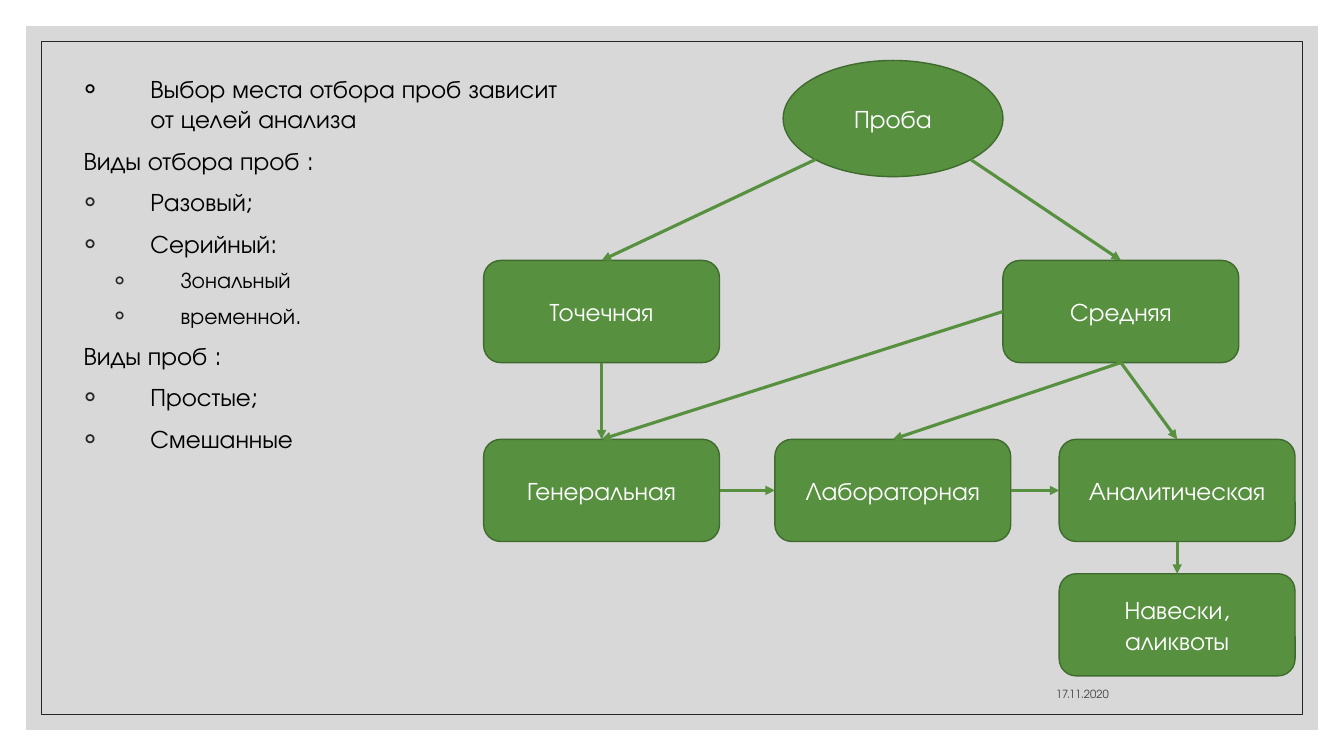
"""Build a slide about the kinds of samples and how they are taken."""
from dataclasses import dataclass
from typing import Optional

from lxml.etree import SubElement
from pptx import Presentation
from pptx.dml.color import RGBColor
from pptx.enum.shapes import MSO_CONNECTOR as Connector, MSO_SHAPE as Preset
from pptx.enum.text import MSO_ANCHOR as Anchor, PP_ALIGN as Align
from pptx.oxml.ns import qn
from pptx.util import Pt

TOP, LEFT, BOTTOM, RIGHT = range(4)


@dataclass(frozen=True)
class Theme:
    """Colours, font and type sizes of the slide."""
    font: str = "TeX Gyre Adventor"
    panel: str = "BFBFBF"
    frame: str = "262626"
    green: str = "57903F"
    dark_green: str = "406B2F"
    text: str = "000000"
    inverse: str = "FFFFFF"
    muted: str = "404040"
    body_size: float = 18
    detail_size: float = 16
    date_size: float = 8


@dataclass(frozen=True)
class Box:
    """Position and size in points."""
    left: float
    top: float
    width: float
    height: float


@dataclass(frozen=True)
class Node:
    """A labelled shape of the diagram."""
    label: str
    box: Box
    preset: Preset = Preset.ROUNDED_RECTANGLE


@dataclass(frozen=True)
class Arrow:
    """An arrow between the sides of two nodes."""
    source: str
    source_side: int
    target: str
    target_side: int


@dataclass(frozen=True)
class Item:
    """A line of the list; level None has no bullet."""
    text: str
    level: Optional[int] = None
    bullet_color: str = "262626"


THEME = Theme()
NODE_WIDTH, NODE_HEIGHT = 168.5, 73
ROW_KINDS, ROW_STAGES, ROW_PORTIONS = 186, 313.8, 409.8
COLUMN_LEFT, COLUMN_MIDDLE, COLUMN_RIGHT = 345.5, 553.5, 756.6


def node(label: str, left: float, top: float) -> Node:
    """Describe a node of the common size."""
    return Node(label, Box(left, top, NODE_WIDTH, NODE_HEIGHT))


ROOT = Node("Проба", Box(559.4, 43.2, 157, 83), Preset.OVAL)
NODES = (
    node("Точечная", COLUMN_LEFT, ROW_KINDS),
    node("Средняя", 716.4, ROW_KINDS),
    node("Генеральная", COLUMN_LEFT, ROW_STAGES),
    node("Лабораторная", COLUMN_MIDDLE, ROW_STAGES),
    node("Аналитическая", COLUMN_RIGHT, ROW_STAGES),
    node("Навески, аликвоты", COLUMN_RIGHT, ROW_PORTIONS),
)
ROOT_ARROWS = ((582.4, "Точечная"), (693.4, "Средняя"))
ROOT_ARROW_TOP = 114
ARROWS = (
    Arrow("Точечная", BOTTOM, "Генеральная", TOP),
    Arrow("Средняя", LEFT, "Генеральная", TOP),
    Arrow("Средняя", BOTTOM, "Лабораторная", TOP),
    Arrow("Средняя", BOTTOM, "Аналитическая", TOP),
    Arrow("Генеральная", RIGHT, "Лабораторная", LEFT),
    Arrow("Лабораторная", RIGHT, "Аналитическая", LEFT),
    Arrow("Аналитическая", BOTTOM, "Навески, аликвоты", TOP),
)
ITEMS = (
    Item("Выбор места отбора проб зависит от целей анализа", 0, THEME.text),
    Item("Виды отбора проб :"),
    Item("Разовый;", 0),
    Item("Серийный:", 0),
    Item("Зональный", 1),
    Item("временной.", 1),
    Item("Виды проб :"),
    Item("Простые;", 0),
    Item("Смешанные", 0),
)


def lengths(box: Box) -> tuple:
    """Return the box as slide lengths."""
    return Pt(box.left), Pt(box.top), Pt(box.width), Pt(box.height)


def write(paragraph, text: str, *, size: float = THEME.body_size,
          color: str = THEME.text, align: Align = Align.LEFT) -> None:
    """Put formatted text into a paragraph."""
    paragraph.alignment = align
    run = paragraph.add_run()
    run.text = text
    run.font.name = THEME.font
    run.font.size = Pt(size)
    run.font.color.rgb = RGBColor.from_string(color)


def add_shape(slide, preset: Preset, box: Box, *, fill: Optional[str] = None,
              line: Optional[str] = None, line_width: float = 1):
    """Add a flat shape with an optional fill and outline."""
    shape = slide.shapes.add_shape(preset, *lengths(box))
    shape.shadow.inherit = False
    if fill:
        shape.fill.solid()
        shape.fill.fore_color.rgb = RGBColor.from_string(fill)
    else:
        shape.fill.background()
    if line:
        shape.line.color.rgb = RGBColor.from_string(line)
        shape.line.width = Pt(line_width)
    else:
        shape.line.fill.background()
    return shape


def add_background(slide) -> None:
    """Add the translucent panel and its thin frame."""
    panel = add_shape(slide, Preset.RECTANGLE, Box(18.7, 18.7, 922.6, 502.6), fill=THEME.panel)
    color = panel.element.spPr.find(f"{qn('a:solidFill')}/{qn('a:srgbClr')}")
    SubElement(color, qn("a:alpha"), val="60000")
    add_shape(slide, Preset.RECTANGLE, Box(29.4, 29.4, 901.2, 481.2),
              line=THEME.frame, line_width=0.5)


def add_text_box(slide, box: Box, anchor: Anchor = Anchor.TOP):
    """Add a wrapping text box and return its text frame."""
    frame = slide.shapes.add_textbox(*lengths(box)).text_frame
    frame.word_wrap = True
    frame.vertical_anchor = anchor
    return frame


def add_bullet(paragraph, level: int, color: str) -> None:
    """Give a paragraph a hanging round bullet."""
    paragraph.level = level
    properties = paragraph._p.get_or_add_pPr()
    properties.set("marL", str(Pt(47.8 + 21.6 * level)))
    properties.set("indent", str(Pt(-47.8)))
    SubElement(SubElement(properties, qn("a:buClr")), qn("a:srgbClr"), val=color)
    SubElement(properties, qn("a:buFont"), typeface=THEME.font)
    SubElement(properties, qn("a:buChar"), char="◦")


def add_list(slide) -> None:
    """Add the list on the left."""
    frame = add_text_box(slide, Box(52.6, 49, 367.2, 295.2))
    for index, item in enumerate(ITEMS):
        paragraph = frame.add_paragraph() if index else frame.paragraphs[0]
        paragraph.space_before = Pt(8)
        if item.level == 1:
            paragraph.line_spacing = 0.9
        if item.level is not None:
            add_bullet(paragraph, item.level, item.bullet_color)
        write(paragraph, item.text,
              size=THEME.detail_size if item.level == 1 else THEME.body_size)


def add_node(slide, item: Node):
    """Add a green node with a centred label."""
    shape = add_shape(slide, item.preset, item.box, fill=THEME.green, line=THEME.dark_green)
    shape.text_frame.word_wrap = True
    shape.text_frame.vertical_anchor = Anchor.MIDDLE
    write(shape.text_frame.paragraphs[0], item.label, color=THEME.inverse, align=Align.CENTER)
    return shape


def add_arrow(slide, target, target_side: int, left: float = 0, top: float = 0):
    """Add an arrow from a point to a side of a shape."""
    arrow = slide.shapes.add_connector(Connector.STRAIGHT, Pt(left), Pt(top), Pt(left), Pt(top))
    arrow.end_connect(target, target_side)
    arrow.line.color.rgb = RGBColor.from_string(THEME.green)
    arrow.line.width = Pt(2.25)
    SubElement(arrow.line._get_or_add_ln(), qn("a:tailEnd"), type="triangle")
    SubElement(arrow.element.spPr, qn("a:effectLst"))
    return arrow


def main() -> None:
    """Build and save the presentation."""
    presentation = Presentation()
    presentation.slide_width, presentation.slide_height = Pt(960), Pt(540)
    slide = presentation.slides.add_slide(presentation.slide_layouts[6])
    add_background(slide)
    add_list(slide)
    date = add_text_box(slide, Box(571.7, 475.2, 227.5, 28.8), Anchor.BOTTOM)
    write(date.paragraphs[0], "17.11.2020", size=THEME.date_size,
          color=THEME.muted, align=Align.RIGHT)
    add_node(slide, ROOT)
    shapes = {item.label: add_node(slide, item) for item in NODES}
    for left, target in ROOT_ARROWS:
        add_arrow(slide, shapes[target], TOP, left, ROOT_ARROW_TOP)
    for item in ARROWS:
        arrow = add_arrow(slide, shapes[item.target], item.target_side)
        arrow.begin_connect(shapes[item.source], item.source_side)
    presentation.save("out.pptx")


if __name__ == "__main__":
    main()
